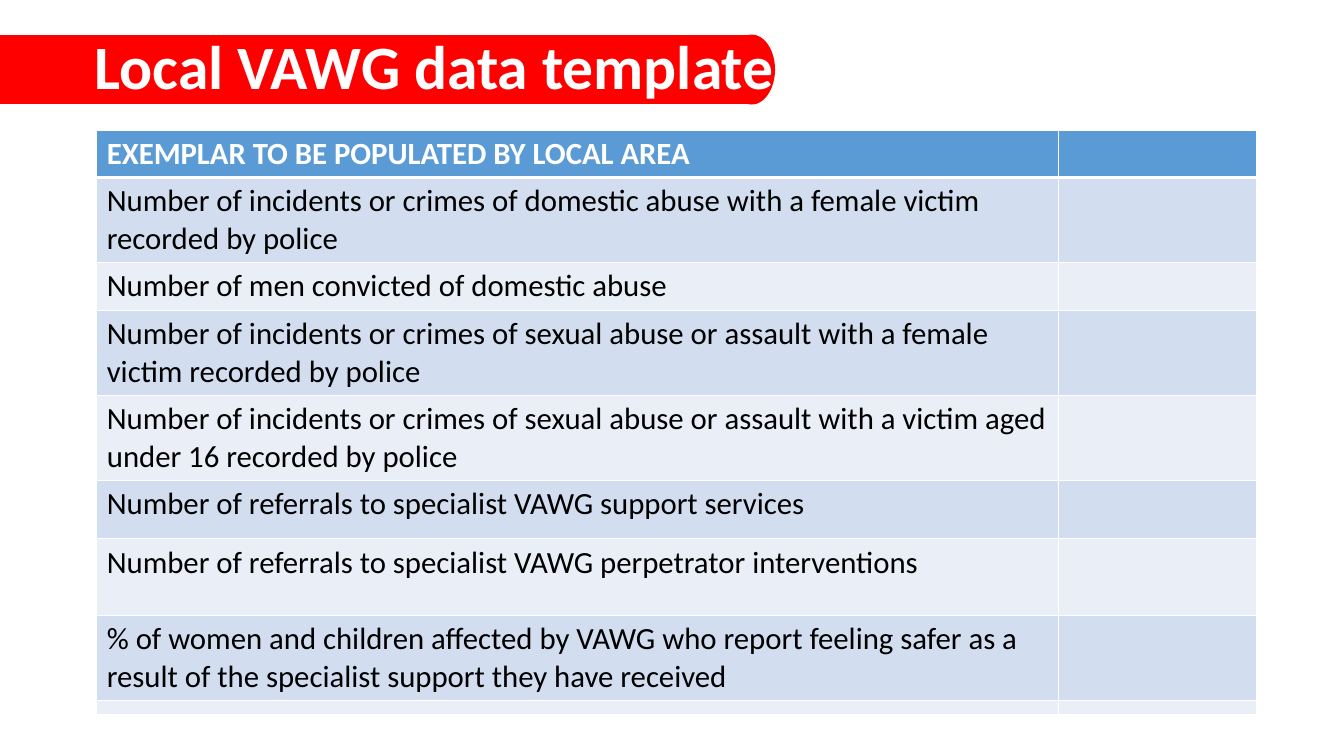
from lxml.etree import SubElement
from pptx import Presentation
from pptx.dml.color import RGBColor
from pptx.enum.shapes import MSO_SHAPE
from pptx.enum.text import MSO_ANCHOR, MSO_AUTO_SIZE, PP_ALIGN
from pptx.oxml.ns import qn
from pptx.util import Inches, Pt

RED = RGBColor(0xFF, 0x00, 0x00)
WHITE = RGBColor(0xFF, 0xFF, 0xFF)
BLACK = RGBColor(0x00, 0x00, 0x00)
HEADER_BLUE = RGBColor(0x5B, 0x9B, 0xD5)
BAND_COLORS = (RGBColor(0xD2, 0xDE, 0xEF), RGBColor(0xEA, 0xEF, 0xF7))

WIDTH, HEIGHT = 13.33, 7.5
COLUMN_WIDTHS = (9.54, 1.96)
# Each measure with the height of its row
MEASURES = (
    ("Number of incidents or crimes of domestic abuse with a female victim recorded by police", 0.76),
    ("Number of men convicted of domestic abuse", 0.43),
    ("Number of incidents or crimes of sexual abuse or assault with a female victim recorded by police", 0.76),
    ("Number of incidents or crimes of sexual abuse or assault with a victim aged under 16 recorded by police", 0.76),
    ("Number of referrals to specialist VAWG support services", 0.58),
    ("Number of referrals to specialist VAWG perpetrator interventions", 0.76),
    ("% of women and children affected by VAWG who report feeling safer as a result of the specialist support "
     "they have received", 0.83),
    ("", 0.14),
)
ROWS = (("EXEMPLAR TO BE POPULATED BY LOCAL AREA", 0.43),) + MEASURES


class SlideBuilder:
    """Holds the slide and its text style; places are shares of the slide."""

    font_name = "Calibri"

    def __init__(self, presentation):
        self.presentation = presentation
        self.slide = presentation.slides.add_slide(presentation.slide_layouts[5])

    def box(self, left, top, width, height):
        across, down = self.presentation.slide_width, self.presentation.slide_height
        return int(left * across), int(top * down), int(width * across), int(height * down)

    def style_text(self, paragraph, size, color, bold=False):
        for run in paragraph.runs:
            run.font.name = self.font_name
            run.font.size = Pt(size)
            run.font.bold = bold
            run.font.color.rgb = color

    def banner(self, parts):
        group = self.slide.shapes.add_group_shape()
        for kind, place in parts:
            shape = group.shapes.add_shape(kind, *self.box(*place))
            shape.shadow.inherit = False
            shape.fill.solid()
            shape.fill.fore_color.rgb = RED
            shape.line.color.rgb = RED
            shape.line.width = Pt(1)

    def title(self, text, place, size):
        title = self.slide.shapes.title
        title.left, title.top, title.width, title.height = self.box(*place)
        text_frame = title.text_frame
        text_frame.text = text
        text_frame.word_wrap = True
        text_frame.auto_size = MSO_AUTO_SIZE.NONE
        text_frame.vertical_anchor = MSO_ANCHOR.MIDDLE
        paragraph = text_frame.paragraphs[0]
        paragraph.alignment = PP_ALIGN.LEFT
        paragraph.line_spacing = 0.9
        self.style_text(paragraph, size, WHITE, bold=True)
        # Bring the title in front of the banner
        self.slide.shapes._spTree.append(title._element)

    def borders(self, cell, bottom_width):
        properties = cell._tc.get_or_add_tcPr()
        widths = {"a:lnL": 1, "a:lnR": 1, "a:lnT": 1, "a:lnB": bottom_width}
        for position, (side, width) in enumerate(widths.items()):
            line = SubElement(properties, qn(side), w=str(Pt(width)))
            fill = SubElement(line, qn("a:solidFill"))
            SubElement(fill, qn("a:srgbClr"), val=str(WHITE))
            # Borders come before the fill in the cell properties
            properties.insert(position, line)

    def table(self, rows, column_widths, place, size):
        table = self.slide.shapes.add_table(len(rows), len(column_widths), *self.box(*place)).table
        for column, width in zip(table.columns, column_widths):
            column.width = Inches(width)
        for index, (label, height) in enumerate(rows):
            header = index == 0
            table.rows[index].height = Inches(height)
            table.cell(index, 0).text_frame.text = label
            for cell in table.rows[index].cells:
                cell.fill.solid()
                cell.fill.fore_color.rgb = HEADER_BLUE if header else BAND_COLORS[(index - 1) % 2]
                self.borders(cell, 3 if header else 1)
                paragraph = cell.text_frame.paragraphs[0]
                self.style_text(paragraph, size, WHITE if header else BLACK, bold=header)
                if not label:
                    # Let the closing strip stay thin
                    cell.margin_top = cell.margin_bottom = 0
                    SubElement(paragraph._p, qn("a:endParaRPr"), sz="200")


def main():
    presentation = Presentation()
    presentation.slide_width = Inches(WIDTH)
    presentation.slide_height = Inches(HEIGHT)
    builder = SlideBuilder(presentation)

    # Title on its rounded banner
    top, height = 0.35 / HEIGHT, 0.68 / HEIGHT
    builder.banner((
        (MSO_SHAPE.RECTANGLE, (0, top, 7.49 / WIDTH, height)),
        (MSO_SHAPE.OVAL, (7.23 / WIDTH, top, 0.45 / WIDTH, height)),
    ))
    builder.title("Local VAWG data template", (0.84 / WIDTH, 0.29 / HEIGHT, 11.62 / WIDTH, 0.8 / HEIGHT), 44)

    # Data table
    place = (0.96 / WIDTH, 1.29 / HEIGHT, sum(COLUMN_WIDTHS) / WIDTH, sum(height for _, height in ROWS) / HEIGHT)
    builder.table(ROWS, COLUMN_WIDTHS, place, 22)

    presentation.save("out.pptx")


if __name__ == "__main__":
    main()
